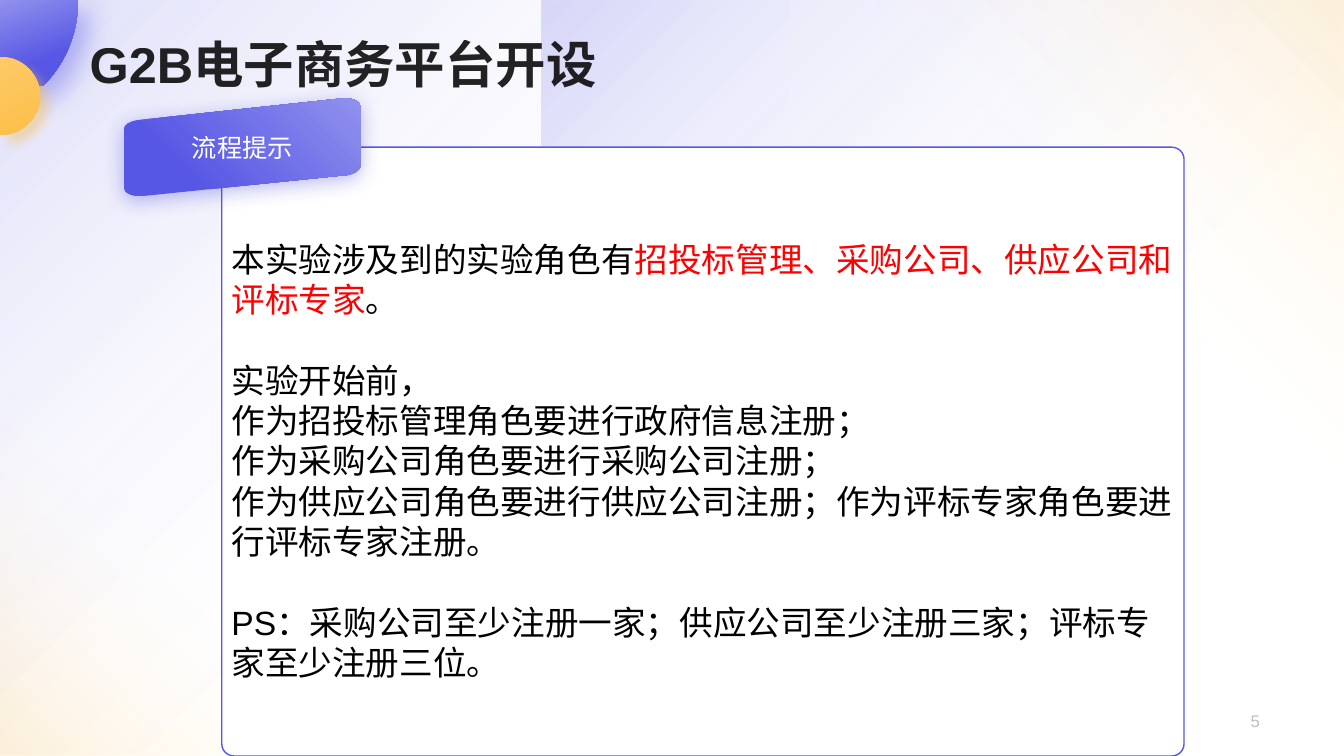
from dataclasses import dataclass
from pptx import Presentation, oxml
from pptx import util as u
from pptx.dml import color as col
from pptx.enum import shapes, text
from pptx.oxml import ns


@dataclass(frozen=True)
class Theme:
    font: str = "Arial"
    blue: str = "5757E5"
    pale: str = "9191EE"
    deep: str = "2020CD"
    gold: str = "FCBE49"
    sand: str = "FDCB67"
    white: str = "FFFFFF"
    black: str = "000000"
    red: str = "FF0000"
    gray: str = "BFBFBF"
    title: int = 36
    body: int = 24
    label: int = 18
    page: int = 12


def paint(shape, stops, angle=None, shade=None):
    shape.shadow.inherit = False
    shape.line.fill.background()
    shape.fill.gradient()
    props = shape.element.spPr
    marks = "".join(
        f'<a:gs pos="{pos * 1000}"><a:srgbClr val="{hue}"><a:alpha val="{alpha * 1000}"/></a:srgbClr></a:gs>'
        for pos, hue, alpha in stops)
    if angle is None:
        way = '<a:path path="circle"><a:fillToRect r="100000" b="100000"/></a:path>'
    else:
        way = f'<a:lin ang="{angle * 60000}" scaled="0"/>'
    grad = oxml.parse_xml(
        f'<a:gradFill {ns.nsdecls("a")} rotWithShape="1"><a:gsLst>{marks}</a:gsLst>{way}</a:gradFill>')
    props.replace(props.find(ns.qn("a:gradFill")), grad)
    if shade:
        hue, alpha, blur, dist, turn = shade
        props.find(ns.qn("a:effectLst")).append(oxml.parse_xml(
            f'<a:outerShdw {ns.nsdecls("a")} blurRad="{u.Pt(blur)}" dist="{u.Pt(dist)}" '
            f'dir="{turn * 60000}" algn="ctr" rotWithShape="0"><a:srgbClr val="{hue}">'
            f'<a:alpha val="{alpha * 1000}"/></a:srgbClr></a:outerShdw>'))


def write(para, words, size, hue, bold=False):
    run = para.add_run()
    run.text = words
    run.font.name = theme.font
    run.font.size = u.Pt(size)
    run.font.bold = bold
    run.font.color.rgb = col.RGBColor.from_string(hue)
    return run


theme = Theme()
deck = Presentation()
deck.slide_width, deck.slide_height = u.Cm(33.87), u.Cm(19.05)
slide = deck.slides.add_slide(deck.slide_layouts[1])
items = slide.shapes
decor = []

haze = [(0, theme.blue, 20), (65, theme.white, 0)]
glow = [(45, theme.white, 0), (98, theme.gold, 20)]
washes = [
    ((0, 0, 19.91, 19.05), haze, None, False),
    ((22.1, 0, 11.77, 12.29), glow, 315, False),
    ((-0.05, 9.91, 10.19, 9.14), glow, 315, True),
    ((13.64, 0, 20.23, 19.05), haze, None, True),
]
for box, stops, angle, flip in washes:
    wash = items.add_shape(shapes.MSO_SHAPE.RECTANGLE, *map(u.Cm, box))
    paint(wash, stops, angle)
    decor.append(wash)
    if flip:
        frame = wash.element.spPr.find(ns.qn("a:xfrm"))
        frame.set("flipH", "1")
        frame.set("flipV", "1")

panel = items.add_shape(shapes.MSO_SHAPE.ROUNDED_RECTANGLE, *map(u.Cm, (5.59, 3.71, 24.25, 15.34)))
panel.adjustments[0] = 0.02
panel.shadow.inherit = False
panel.fill.solid()
panel.fill.fore_color.rgb = col.RGBColor.from_string(theme.white)
panel.line.color.rgb = col.RGBColor.from_string(theme.blue)
panel.line.width = u.Pt(1)

ball = "LLCCC", [(0, 0), (1.96, 0), (1.98, 0.18), (1.98, 1.27), (1.09, 2.16), (0, 2.16)]
dot = "LCCCCCCLL", [(0.02, 1.43), (0.56, 1.43), (1.01, 1.88), (1.01, 2.42), (1.01, 2.96),
                    (0.56, 3.4), (0.02, 3.4), (0, 3.4), (0, 1.43)]
tag = "LLCCCLCCCLCCCLCCC", [
    (3.61, 4.94), (8.76, 4.41), (8.94, 4.38), (9.09, 4.28), (9.09, 4.17),
    (9.09, 2.69), (9.09, 2.55), (8.86, 2.45), (8.61, 2.48),
    (3.45, 3.03), (3.25, 3.06), (3.12, 3.15), (3.12, 3.26),
    (3.12, 4.74), (3.12, 4.87), (3.35, 4.97), (3.61, 4.94)]
forms = [
    (ball, [(0, theme.pale, 100), (67, theme.blue, 100)], 70, (theme.blue, 40, 19, 11, 45)),
    (dot, [(0, theme.sand, 100), (100, theme.gold, 100)], 70, (theme.gold, 40, 7, 8, 45)),
    (tag, [(25, theme.blue, 100), (100, theme.pale, 100)], 315, (theme.deep, 30, 15, 3, 90)),
]
for (kinds, points), stops, angle, shade in forms:
    spots = [(u.Cm(x), u.Cm(y)) for x, y in points]
    pen = items.build_freeform(*spots[0], scale=1.0)
    pen.add_line_segments(spots[1:], close=False)
    form = pen.convert_to_shape()
    paint(form, stops, angle, shade)
    decor.append(form)
    route = form.element.spPr.find(".//" + ns.qn("a:moveTo")).getparent()
    bends = [part for kind, part in zip(kinds[1:], list(route)[1:]) if kind == "C"]
    for first in range(0, len(bends), 3):
        curve = oxml.parse_xml(f'<a:cubicBezTo {ns.nsdecls("a")}/>')
        bends[first].addprevious(curve)
        for part in bends[first:first + 3]:
            curve.append(part[0])
            route.remove(part)
    route.append(oxml.parse_xml(f'<a:close {ns.nsdecls("a")}/>'))

label_box = decor.pop()
label_box.text_frame.vertical_anchor = text.MSO_ANCHOR.MIDDLE
label = label_box.text_frame.paragraphs[0]
label.alignment = text.PP_ALIGN.CENTER
write(label, "流程提示", theme.label, theme.white)

anchor = deck.slide_master.placeholders[0].element
for index, shape in enumerate(decor):
    shape.element.nvSpPr.cNvPr.set("id", str(101 + index))
    anchor.addprevious(shape.element)

page_box = items.add_textbox(*map(u.Cm, (24.38, 17.65, 7.62, 1.02)))
page = page_box.text_frame
page.word_wrap = True
page.vertical_anchor = text.MSO_ANCHOR.MIDDLE
page.paragraphs[0].alignment = text.PP_ALIGN.RIGHT
write(page.paragraphs[0], "5", theme.page, theme.gray)

title, body = items.title, slide.placeholders[1]
spots = [(title, (2.16, 0.89, 16.46, 1.4)), (body, (5.58, 5.89, 24.26, 12.78))]
for holder, box in spots:
    holder.left, holder.top, holder.width, holder.height = map(u.Cm, box)
    holder.text_frame.word_wrap = True
    holder.text_frame.auto_size = text.MSO_AUTO_SIZE.NONE
    holder.text_frame.vertical_anchor = text.MSO_ANCHOR.TOP
for shape in (title, page_box, panel, label_box, body):
    shape.element.getparent().append(shape.element)

title.text_frame.margin_left = u.Cm(0.1)
head = title.text_frame.paragraphs[0]
head.alignment = text.PP_ALIGN.LEFT
head.line_spacing = 0.9
write(head, "G2B电子商务平台开设", theme.title, theme.black, True)
title.element.find(".//" + ns.qn("a:srgbClr")).append(
    oxml.parse_xml(f'<a:alpha {ns.nsdecls("a")} val="85000"/>'))

lines = [
    (0, [("本实验涉及到的实验角色有", theme.black),
         ("招投标管理、采购公司、供应公司和评标专家", theme.red), ("。", theme.black)]),
    (1, [("实验开始前，", theme.black)]),
    (0, [("作为招投标管理角色要进行政府信息注册；", theme.black)]),
    (0, [("作为采购公司角色要进行采购公司注册；", theme.black)]),
    (0, [("作为供应公司角色要进行供应公司注册；作为评标专家角色要进行评标专家注册。", theme.black)]),
    (1, [("PS：采购公司至少注册一家；供应公司至少注册三家；评标专家至少注册三位。", theme.black)]),
]
for row, (gap, runs) in enumerate(lines):
    para = body.text_frame.paragraphs[0] if row == 0 else body.text_frame.add_paragraph()
    para.space_before = u.Pt(gap * theme.body * 1.2)
    props = para._p.get_or_add_pPr()
    props.set("marL", "0")
    props.set("indent", "0")
    props.append(oxml.parse_xml(f'<a:buNone {ns.nsdecls("a")}/>'))
    for words, hue in runs:
        write(para, words, theme.body, hue)

deck.save("out.pptx")
